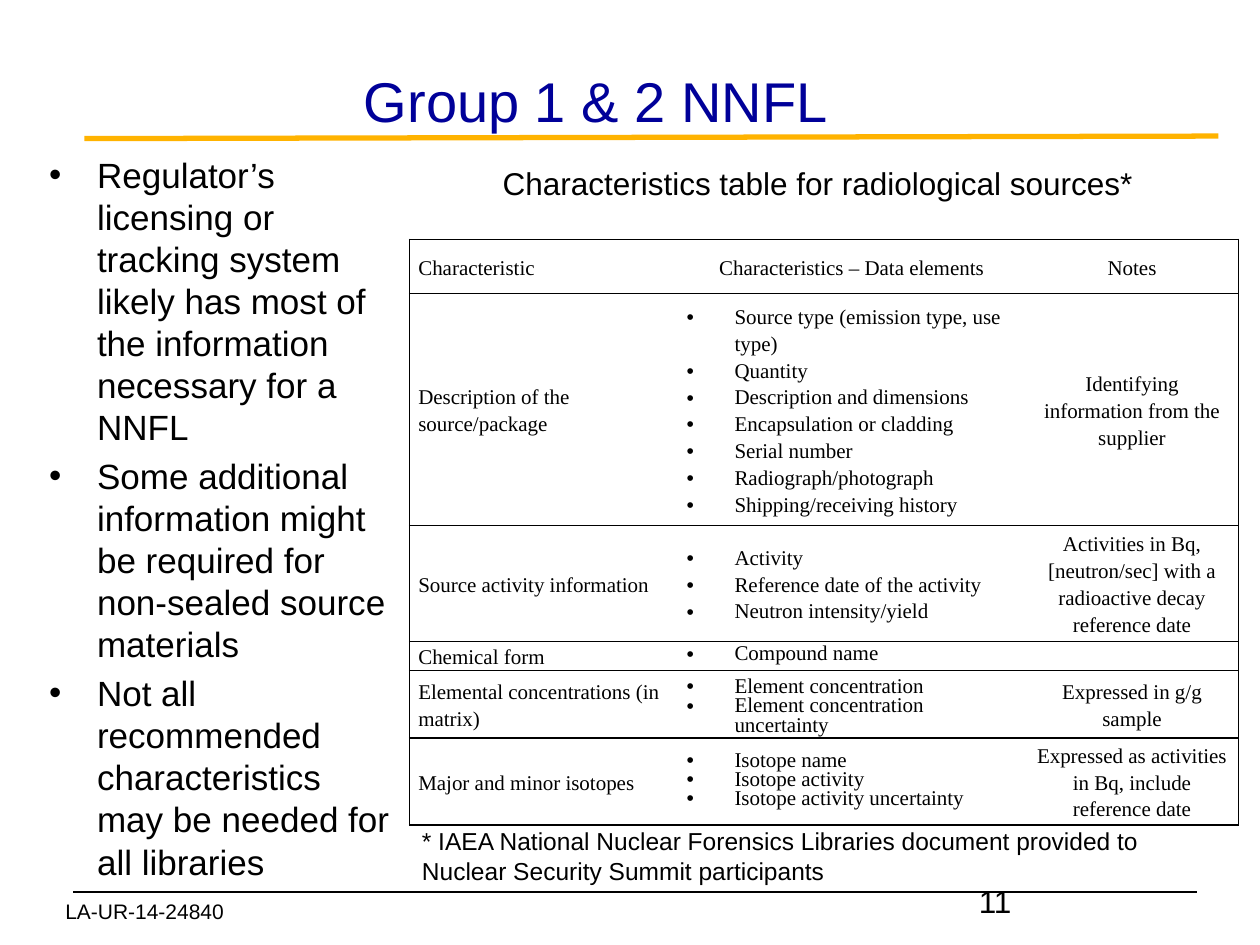
from lxml.etree import SubElement
from pptx import Presentation
from pptx.dml.color import RGBColor
from pptx.enum.shapes import MSO_CONNECTOR
from pptx.enum.text import MSO_ANCHOR, MSO_AUTO_SIZE, PP_ALIGN
from pptx.oxml import parse_xml
from pptx.oxml.ns import nsdecls, qn
from pptx.util import Inches, Pt

BLACK, NAVY, AMBER = "000000", "000099", "FFB300"
TIGHT = Pt(11)
LOOSE = 1.15


def color(value):
    return RGBColor.from_string(value)


class SlideBuilder:
    font = "Arial"
    table_font = "Times New Roman"
    table_size = 12
    hanging = Inches(0.38)

    def __init__(self, slide):
        self.slide = slide

    def place(self, shape, left, top, width, height):
        shape.left, shape.top = Inches(left), Inches(top)
        shape.width, shape.height = Inches(width), Inches(height)

    def style(self, paragraph, size, name=None, fill=BLACK):
        for run in paragraph.runs:
            run.font.size = Pt(size)
            run.font.name = name or self.font
            run.font.color.rgb = color(fill)

    def bullet(self, paragraph, tab=False):
        properties = paragraph._p.get_or_add_pPr()
        properties.set("marL", str(self.hanging))
        properties.set("indent", str(-self.hanging))
        SubElement(properties, qn("a:buFont")).set("typeface", "Arial")
        SubElement(properties, qn("a:buChar")).set("char", "•")
        if tab:
            stop = SubElement(SubElement(properties, qn("a:tabLst")), qn("a:tab"))
            stop.set("pos", str(Inches(0.25)))
            stop.set("algn", "l")

    def line(self, start, end, fill, width):
        connector = self.slide.shapes.add_connector(
            MSO_CONNECTOR.STRAIGHT, *map(Inches, start + end))
        connector.line.color.rgb = color(fill)
        connector.line.width = Pt(width)
        SubElement(connector._element.spPr, qn("a:effectLst"))

    def title(self, text, box, size):
        shape = self.slide.shapes.title
        self.place(shape, *box)
        frame = shape.text_frame
        frame.text = text
        frame.auto_size = MSO_AUTO_SIZE.NONE
        frame.vertical_anchor = MSO_ANCHOR.MIDDLE
        frame.paragraphs[0].alignment = PP_ALIGN.CENTER
        self.style(frame.paragraphs[0], size, fill=NAVY)

    def body(self, items, box, size):
        shape = self.slide.placeholders[1]
        self.place(shape, *box)
        frame = shape.text_frame
        frame.text = "\n".join(items)
        frame.auto_size = MSO_AUTO_SIZE.NONE
        for index, paragraph in enumerate(frame.paragraphs):
            self.bullet(paragraph)
            paragraph.space_before = Pt(size * 0.2 if index else 0)
            self.style(paragraph, size)

    def text(self, text, box, size, align=PP_ALIGN.LEFT):
        frame = self.slide.shapes.add_textbox(*map(Inches, box)).text_frame
        frame.word_wrap = True
        frame.text = text
        frame.paragraphs[0].alignment = align
        self.style(frame.paragraphs[0], size)

    def borders(self, cell, sides):
        properties = cell._tc.get_or_add_tcPr()
        for index, side in enumerate("LRTB"):
            paint = (f'<a:solidFill><a:srgbClr val="{BLACK}"/></a:solidFill>'
                     if side in sides else "<a:noFill/>")
            properties.insert(index, parse_xml(
                f'<a:ln{side} {nsdecls("a")} w="{Pt(1)}">{paint}</a:ln{side}>'))

    def cell(self, cell, lines, spacings, sides, align, bulleted):
        cell.fill.background()
        self.borders(cell, sides)
        cell.vertical_anchor = MSO_ANCHOR.MIDDLE
        cell.margin_left = cell.margin_right = Inches(0.07)
        cell.margin_top = cell.margin_bottom = 0
        cell.text_frame.text = "\n".join(lines)
        for paragraph, spacing in zip(cell.text_frame.paragraphs, spacings):
            if bulleted:
                self.bullet(paragraph, tab=True)
            paragraph.alignment = align
            paragraph.line_spacing = spacing
            self.style(paragraph, self.table_size, self.table_font)
            if not paragraph.runs:
                SubElement(paragraph._p, qn("a:endParaRPr")).set(
                    "sz", str(self.table_size * 100))

    def table(self, header, rows, box, widths, heights):
        table = self.slide.shapes.add_table(
            len(rows) + 1, len(widths), *map(Inches, box)).table
        table.first_row = table.horz_banding = False
        for column, width in zip(table.columns, widths):
            column.width = Inches(width)
        for row, height in zip(table.rows, heights):
            row.height = Inches(height)
        contents = [(header[0], [header[1]], [LOOSE], header[2])] + rows
        for index, (name, elements, spacings, note) in enumerate(contents):
            left, middle, right = table.rows[index].cells
            is_list = index > 0
            self.cell(left, [name], [LOOSE], "LTB", PP_ALIGN.LEFT, False)
            self.cell(middle, elements, spacings, "TB",
                      PP_ALIGN.LEFT if is_list else PP_ALIGN.CENTER, is_list)
            self.cell(right, [note], [LOOSE], "RTB", PP_ALIGN.CENTER, False)


HEADER = ("Characteristic", "Characteristics – Data elements", "Notes")
# Characteristic, data elements, line spacing of each element, note
ROWS = [
    ("Description of the source/package",
     ["Source type (emission type, use type)", "Quantity",
      "Description and dimensions", "Encapsulation or cladding",
      "Serial number", "Radiograph/photograph", "Shipping/receiving history"],
     [LOOSE] * 7, "Identifying information from the supplier"),
    ("Source activity information",
     ["Activity", "Reference date of the activity", "Neutron intensity/yield"],
     [LOOSE] * 3,
     "Activities in Bq, [neutron/sec] with a radioactive decay reference date"),
    ("Chemical form", ["Compound name"], [TIGHT], ""),
    ("Elemental concentrations (in matrix)",
     ["Element concentration", "Element concentration uncertainty"],
     [LOOSE, TIGHT], "Expressed in g/g sample"),
    ("Major and minor isotopes",
     ["Isotope name", "Isotope activity", "Isotope activity uncertainty"],
     [TIGHT] * 3, "Expressed as activities in Bq, include reference date"),
]
POINTS = [
    "Regulator’s licensing or tracking system likely has most of the "
    "information necessary for a NNFL",
    "Some additional information might be required for non-sealed source materials",
    "Not all recommended characteristics may be needed for all libraries",
]


def main():
    presentation = Presentation()
    presentation.slide_width, presentation.slide_height = Inches(10), Inches(7.5)
    builder = SlideBuilder(
        presentation.slides.add_slide(presentation.slide_layouts[1]))

    # Rules and footer
    builder.line((0.58, 7.08), (9.5, 7.08), BLACK, 0.75)
    builder.line((0.67, 1.1), (9.67, 1.08), AMBER, 3)
    builder.text("LA-UR-14-24840", (0.42, 7.08, 2, 0.5), 12)
    builder.text("11", (7.67, 6.95, 2.33, 0.4), 18)

    # Title and points
    builder.title("Group 1 & 2 NNFL", (0.54, 0.42, 8.38, 0.75), 32)
    builder.body(POINTS, (0.29, 1.17, 2.96, 4.54), 20)

    # Characteristics table with caption and source
    builder.table(HEADER, ROWS, (3.25, 1.9, 6.57, 4.59), (2.13, 2.76, 1.69),
                  (0.43, 1.81, 0.91, 0.23, 0.53, 0.68))
    builder.text("Characteristics table for radiological sources*",
                 (3.28, 1.25, 6.42, 0.4), 18, PP_ALIGN.CENTER)
    builder.text("* IAEA National Nuclear Forensics Libraries document provided "
                 "to Nuclear Security Summit participants",
                 (3.25, 6.51, 6.42, 0.57), 14)

    presentation.save("out.pptx")


if __name__ == "__main__":
    main()
